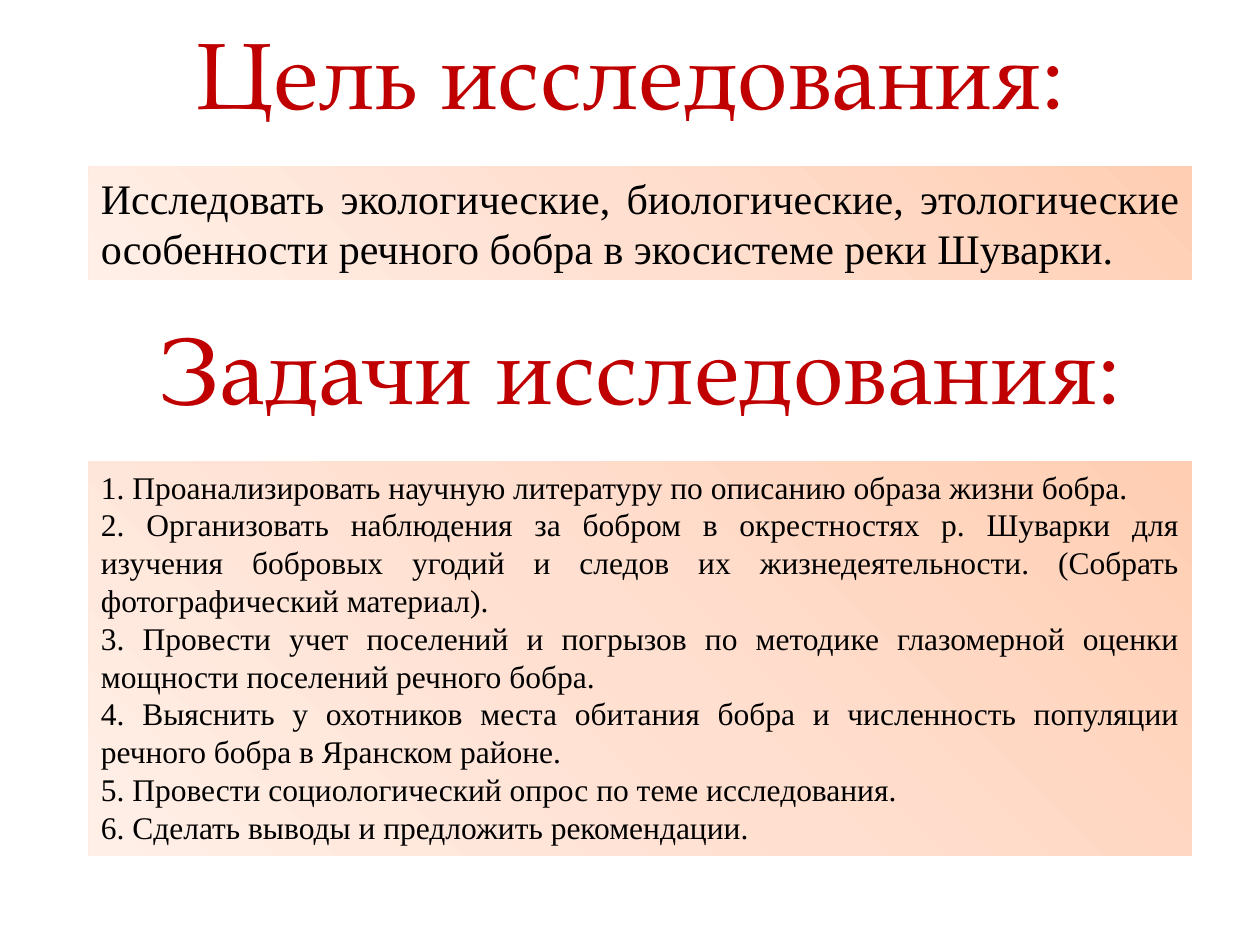
from copy import deepcopy
from dataclasses import dataclass

from lxml import etree
from pptx import Presentation
from pptx.dml.color import RGBColor
from pptx.enum.text import MSO_ANCHOR, MSO_AUTO_SIZE, PP_ALIGN
from pptx.oxml.ns import qn
from pptx.util import Cm, Pt

CENTER, JUSTIFY = PP_ALIGN.CENTER, PP_ALIGN.JUSTIFY
TOP, MIDDLE = MSO_ANCHOR.TOP, MSO_ANCHOR.MIDDLE
NO_AUTOFIT = MSO_AUTO_SIZE.NONE

TWO_CONTENT_LAYOUT = 3
GRADIENT = ((0, "FFCEB3"), (0.5, "FFDFCF"), (1, "FFEFE7"))
GRADIENT_ANGLE = 225  # counter-clockwise: dark top right, light bottom left
PANEL_LEFT, PANEL_WIDTH = 1.78, 22.25
HEADING_WIDTH, HEADING_HEIGHT = 21.89, 2.08

GOAL = ("Исследовать экологические, биологические, этологические особенности "
        "речного бобра в экосистеме реки Шуварки.",)
TASKS = (
    "1. Проанализировать научную литературу по описанию образа жизни бобра.",
    "2. Организовать наблюдения за бобром в окрестностях р. Шуварки для изучения "
    "бобровых угодий и следов их жизнедеятельности. (Собрать фотографический материал).",
    "3. Провести учет поселений и погрызов по методике глазомерной оценки "
    "мощности поселений речного бобра.",
    "4. Выяснить у охотников места обитания бобра и численность популяции "
    "речного бобра в Яранском районе.",
    "5. Провести социологический опрос по теме исследования.",
    "6. Сделать выводы и предложить рекомендации.",
)


@dataclass(frozen=True)
class Heading:
    text: str
    left: float
    top: float


@dataclass(frozen=True)
class Panel:
    paragraphs: tuple[str, ...]
    top: float
    height: float
    size: int


GOAL_HEADING = Heading("Цель исследования:", 1.78, 0.56)
TASKS_HEADING = Heading("Задачи исследования:", 1.96, 6.5)
GOAL_PANEL = Panel(GOAL, 3.35, 2.29, 24)
TASKS_PANEL = Panel(TASKS, 9.3, 7.95, 18)


def color(value: str) -> RGBColor:
    return RGBColor.from_string(value)


def set_attributes(target, values: dict) -> None:
    for name, value in values.items():
        setattr(target, name, value)


def place(shape, left: float, top: float, width: float, height: float) -> None:
    set_attributes(shape, {"left": Cm(left), "top": Cm(top),
                           "width": Cm(width), "height": Cm(height)})


def write(paragraph, text: str, font: str, size: int, font_color: str,
          paragraph_format: dict) -> None:
    set_attributes(paragraph, {"space_before": Pt(0), "space_after": Pt(0),
                               **paragraph_format})
    run = paragraph.add_run()
    run.text = text
    set_attributes(run.font, {"name": font, "size": Pt(size), "bold": False})
    run.font.color.rgb = color(font_color)


def draw_heading(shape, heading: Heading) -> None:
    place(shape, heading.left, heading.top, HEADING_WIDTH, HEADING_HEIGHT)
    frame = shape.text_frame
    set_attributes(frame, {
        "word_wrap": True, "auto_size": NO_AUTOFIT, "vertical_anchor": MIDDLE,
        "margin_left": 0, "margin_right": 0, "margin_top": 0, "margin_bottom": 0})
    write(frame.paragraphs[0], heading.text, "TeX Gyre Pagella", 54, "C00000",
          {"alignment": CENTER, "line_spacing": 0.9})


def fill_gradient(shape) -> None:
    shape.fill.gradient()
    shape.fill.gradient_angle = GRADIENT_ANGLE
    # The default gradient has two stops; a third is added for the middle tone
    stop_list = shape.fill._fill._gradFill.find(qn("a:gsLst"))
    stop_list.append(deepcopy(stop_list[0]))
    for stop, (position, tone) in zip(shape.fill.gradient_stops, GRADIENT):
        stop.position = position
        stop.color.rgb = color(tone)


def remove_bullet(paragraph) -> None:
    properties = paragraph._p.get_or_add_pPr()
    properties.set("marL", "0")
    properties.set("indent", "0")
    etree.SubElement(properties, qn("a:buNone"))


def draw_panel(shape, panel: Panel) -> None:
    place(shape, PANEL_LEFT, panel.top, PANEL_WIDTH, panel.height)
    fill_gradient(shape)
    shape.line.fill.background()
    frame = shape.text_frame
    set_attributes(frame, {"word_wrap": True, "auto_size": NO_AUTOFIT,
                           "vertical_anchor": TOP})
    for index, text in enumerate(panel.paragraphs):
        paragraph = frame.add_paragraph() if index else frame.paragraphs[0]
        remove_bullet(paragraph)
        write(paragraph, text, "Times New Roman", panel.size, "000000",
              {"alignment": JUSTIFY})


def main() -> None:
    presentation = Presentation()
    set_attributes(presentation, {"slide_width": Cm(25.4), "slide_height": Cm(19.05)})
    slide = presentation.slides.add_slide(
        presentation.slide_layouts[TWO_CONTENT_LAYOUT])
    goal_body, tasks_body = slide.placeholders[1], slide.placeholders[2]

    # Goal of the study
    draw_heading(slide.shapes.title, GOAL_HEADING)
    draw_panel(goal_body, GOAL_PANEL)

    # Tasks of the study
    draw_panel(tasks_body, TASKS_PANEL)
    draw_heading(slide.shapes.add_textbox(0, 0, 0, 0), TASKS_HEADING)

    presentation.save("out.pptx")


if __name__ == "__main__":
    main()
